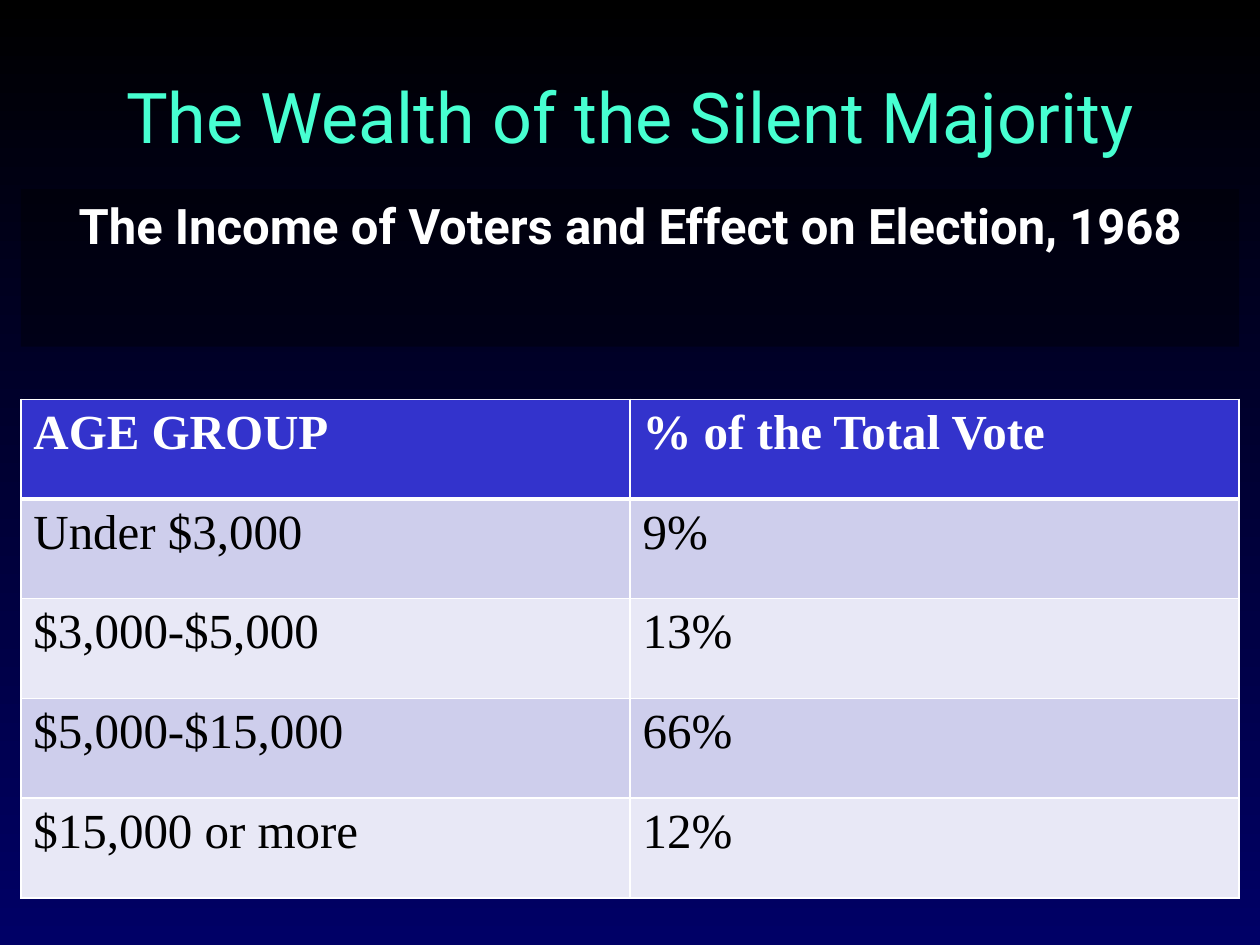
"""Build the slide on voter income and the 1968 election."""
import lxml.etree
import pptx
import pptx.dml.color
import pptx.enum.text
import pptx.oxml.ns
import pptx.util

Cm, Pt = pptx.util.Cm, pptx.util.Pt
RGBColor = pptx.dml.color.RGBColor
qn = pptx.oxml.ns.qn

BLACK = RGBColor(0x00, 0x00, 0x00)
WHITE = RGBColor(0xFF, 0xFF, 0xFF)
NAVY = RGBColor(0x00, 0x00, 0x66)
AQUA = RGBColor(0x47, 0xFF, 0xD1)
HEADER_BLUE = RGBColor(0x33, 0x33, 0xCC)
BANDS = [RGBColor(0xCE, 0xCE, 0xEC), RGBColor(0xE8, 0xE8, 0xF6)]

VOTES = [
    ("AGE GROUP", "% of the Total Vote"),
    ("Under $3,000", "9%"),
    ("$3,000-$5,000", "13%"),
    ("$5,000-$15,000", "66%"),
    ("$15,000 or more", "12%"),
]


def style(paragraph, face, size, color, bold):
    for run in paragraph.runs:
        run.font.name = face
        run.font.size = Pt(size)
        run.font.color.rgb = color
        run.font.bold = bold


def add_border(cell, side, width):
    line = lxml.etree.Element(qn(f"a:{side}"), w=str(Pt(width)))
    fill = lxml.etree.SubElement(line, qn("a:solidFill"))
    lxml.etree.SubElement(fill, qn("a:srgbClr"), val=str(WHITE))
    return line


presentation = pptx.Presentation()
presentation.slide_width = Cm(25.4)
presentation.slide_height = Cm(19.05)
slide = presentation.slides.add_slide(presentation.slide_layouts[1])

backdrop = slide.background.fill
backdrop.gradient()
backdrop.gradient_angle = 270
for stop, color in zip(backdrop.gradient_stops, (BLACK, NAVY)):
    stop.color.rgb = color

title = slide.shapes.title
subtitle = slide.placeholders[1]
for heading, text, box, anchor, size, color, bold in (
    (title, "The Wealth of the Silent Majority", (0.85, 1.27, 23.7, 2.12),
     pptx.enum.text.MSO_ANCHOR.MIDDLE, 40, AQUA, False),
    (subtitle, "The Income of Voters and Effect on Election, 1968", (0.42, 3.81, 24.56, 3.18),
     pptx.enum.text.MSO_ANCHOR.TOP, 28, WHITE, True),
):
    heading.left, heading.top, heading.width, heading.height = map(Cm, box)
    frame = heading.text_frame
    frame.text = text
    frame.word_wrap = True
    frame.auto_size = pptx.enum.text.MSO_AUTO_SIZE.NONE
    frame.vertical_anchor = anchor
    paragraph = frame.paragraphs[0]
    paragraph.alignment = pptx.enum.text.PP_ALIGN.CENTER
    paragraph.space_before = Pt(0)
    style(paragraph, "Roboto", size, color, bold)

subtitle_format = subtitle.text_frame.paragraphs[0]._p.get_or_add_pPr()
subtitle_format.set("marL", "0")
subtitle_format.set("indent", "0")
lxml.etree.SubElement(subtitle_format, qn("a:buNone"))
subtitle.fill.solid()
subtitle.fill.fore_color.rgb = BLACK
shade = subtitle.fill._xPr.find(qn("a:solidFill")).find(qn("a:srgbClr"))
lxml.etree.SubElement(shade, qn("a:alpha"), val="37000")

table = slide.shapes.add_table(
    len(VOTES), 2, Cm(0.42), Cm(8.05), Cm(24.56), Cm(10.05)).table
for row, texts in enumerate(VOTES):
    header = row == 0
    for column, text in enumerate(texts):
        cell = table.cell(row, column)
        cell.text = text
        style(cell.text_frame.paragraphs[0], "Times New Roman", 28,
              WHITE if header else BLACK, header)
        borders = {"lnL": 1, "lnR": 1, "lnT": 3 if row == 1 else 1, "lnB": 3 if header else 1}
        cell_format = cell._tc.get_or_add_tcPr()
        for side, width in borders.items():
            cell_format.append(add_border(cell, side, width))
        cell.fill.solid()
        cell.fill.fore_color.rgb = HEADER_BLUE if header else BANDS[(row - 1) % 2]

presentation.save("out.pptx")
